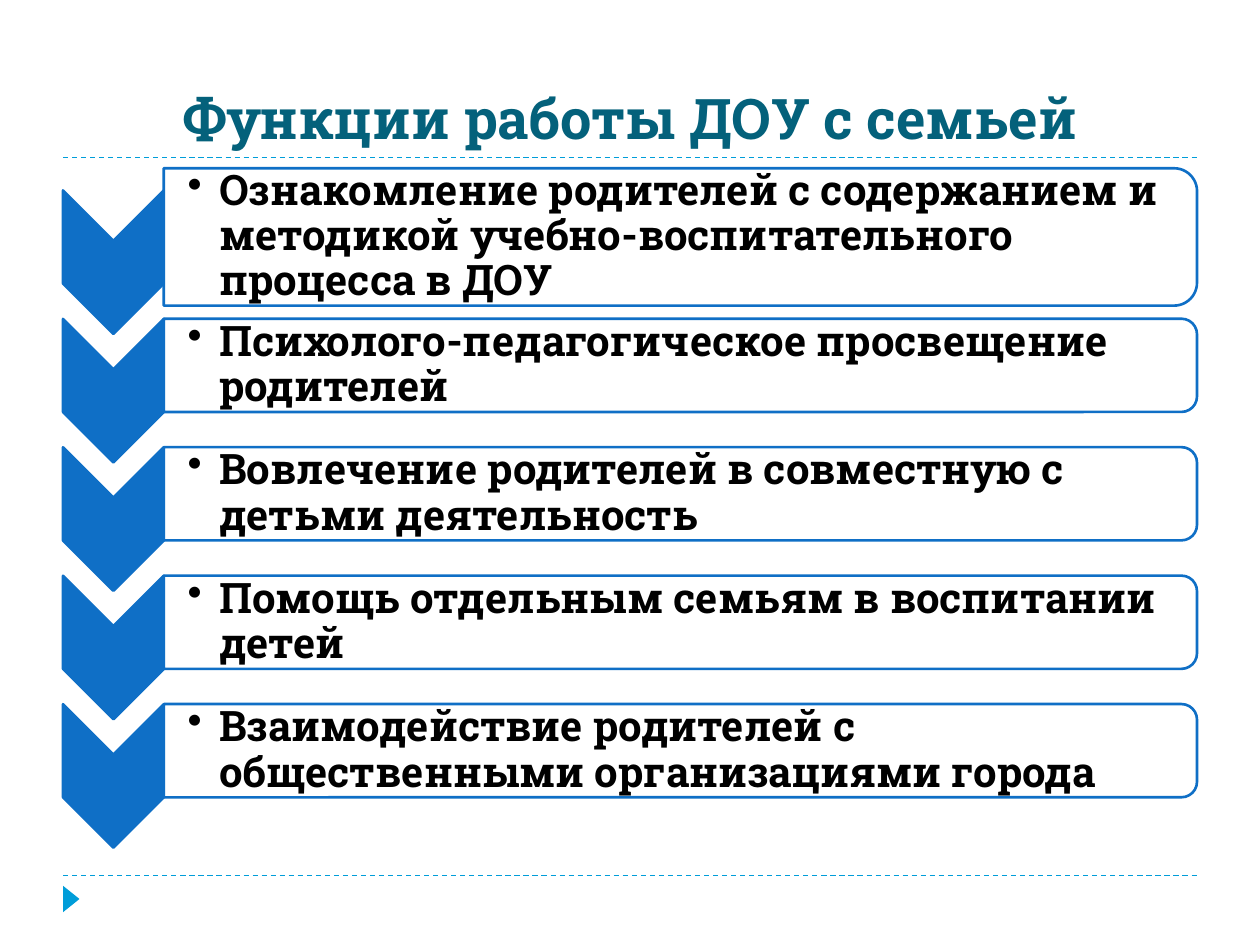
"""Builds a slide listing the ways a kindergarten works with families."""
import pptx
import pptx.dml.color
import pptx.enum.dml
import pptx.enum.shapes
import pptx.enum.text
import pptx.oxml
import pptx.oxml.ns
import pptx.util

Pt = pptx.util.Pt
RGB = pptx.dml.color.RGBColor
SHAPE = pptx.enum.shapes.MSO_SHAPE
ALIGN = pptx.enum.text.PP_ALIGN
ANCHOR = pptx.enum.text.MSO_ANCHOR

TITLE = "Функции работы ДОУ с семьей"
ITEMS = [
    ("Ознакомление родителей с содержанием и методикой "
     "учебно-воспитательного процесса в ДОУ", 78.5),
    ("Психолого-педагогическое просвещение родителей", 53.3),
    ("Вовлечение родителей в совместную с детьми деятельность", 53.3),
    ("Помощь отдельным семьям в воспитании детей", 53.3),
    ("Взаимодействие родителей с общественными организациями города", 53.3),
]
FONT = "Roboto Slab"
TEAL = RGB(0x04, 0x61, 0x7B)
CYAN = RGB(0x00, 0x9D, 0xD9)
BLUE = RGB(0x0F, 0x6F, 0xC6)
WHITE = RGB(0xFF, 0xFF, 0xFF)
BLACK = RGB(0, 0, 0)
LEFT, RIGHT = 36, 684
RULES = (90, 500.4)
FIRST, STEP, DROP = 135.4, 73.4, 14.4
ARROW = (82, 57.6)
EDGE = LEFT + ARROW[1]


def element(parent, tag, **attrs):
    child = pptx.oxml.parse_xml(f"<a:{tag} {pptx.oxml.ns.nsdecls('a')}/>")
    for key, value in attrs.items():
        child.set(key, value)
    parent.append(child)


def write(frame, text, size=24, color=BLACK, align=ALIGN.LEFT,
          anchor=ANCHOR.MIDDLE, insets=(7.2, 3.6, 7.2, 3.6), bullet=False):
    frame.word_wrap = True
    frame.auto_size = pptx.enum.text.MSO_AUTO_SIZE.NONE
    frame.vertical_anchor = anchor
    (frame.margin_left, frame.margin_top,
     frame.margin_right, frame.margin_bottom) = map(Pt, insets)
    para = frame.paragraphs[0]
    para.alignment = align
    run = para.add_run()
    run.text = text
    font = run.font
    font.name, font.size, font.bold = FONT, Pt(size), True
    font.color.rgb = color
    if bullet:
        para.line_spacing = 0.9
        para.space_after = Pt(4)
        props = para._p.get_or_add_pPr()
        props.set("marL", str(Pt(18)))
        props.set("indent", str(-Pt(18)))
        element(props, "buChar", char="•")


def turned(slide, kind, midx, midy, width, height, fill, line=None):
    shape = slide.shapes.add_shape(kind, Pt(midx - width / 2), Pt(midy - height / 2),
                                   Pt(width), Pt(height))
    shape.rotation = 90
    shape.shadow.inherit = False
    shape.fill.solid()
    shape.fill.fore_color.rgb = fill
    if line is None:
        shape.line.fill.background()
    else:
        shape.line.color.rgb = line
        shape.line.width = Pt(1.5)
    return shape


def rule(slide, top):
    line = slide.shapes.add_connector(pptx.enum.shapes.MSO_CONNECTOR.STRAIGHT,
                                      Pt(LEFT), Pt(top), Pt(RIGHT), Pt(top))
    line.line.color.rgb = CYAN
    line.line.width = Pt(0.75)
    line.line.dash_style = pptx.enum.dml.MSO_LINE.DASH
    element(line._element.spPr, "effectLst")


def step(slide, mid, text, height):
    turned(slide, SHAPE.CHEVRON, LEFT + ARROW[1] / 2, mid + DROP, *ARROW, BLUE, BLUE)
    box = turned(slide, SHAPE.ROUND_2_SAME_RECTANGLE, (EDGE + RIGHT) / 2, mid,
                 height, RIGHT - EDGE, WHITE, BLUE)
    tint = box._element.spPr.find(".//" + pptx.oxml.ns.qn("a:srgbClr"))
    element(tint, "alpha", val="90000")
    tall = height - 5
    label = slide.shapes.add_textbox(Pt(EDGE), Pt(mid - tall / 2),
                                     Pt(RIGHT - EDGE - 3), Pt(tall))
    write(label.text_frame, text, insets=(13.7, 1.4, 1.4, 1.4), bullet=True)


def main():
    deck = pptx.Presentation()
    deck.slide_width, deck.slide_height = Pt(720), Pt(540)
    slide = deck.slides.add_slide(deck.slide_layouts[5])
    for top in RULES:
        rule(slide, top)
    turned(slide, SHAPE.ISOSCELES_TRIANGLE, 40.7, 513.7, 15.1, 9.4, CYAN)
    title = slide.shapes.title
    title.left, title.top, title.width, title.height = map(Pt, (LEFT, 12.2, 648, 77.8))
    write(title.text_frame, TITLE, size=32, color=TEAL,
          align=ALIGN.CENTER, anchor=ANCHOR.BOTTOM)
    for row, (text, height) in enumerate(ITEMS):
        step(slide, FIRST + row * STEP, text, height)
    deck.save("out.pptx")


if __name__ == "__main__":
    main()
